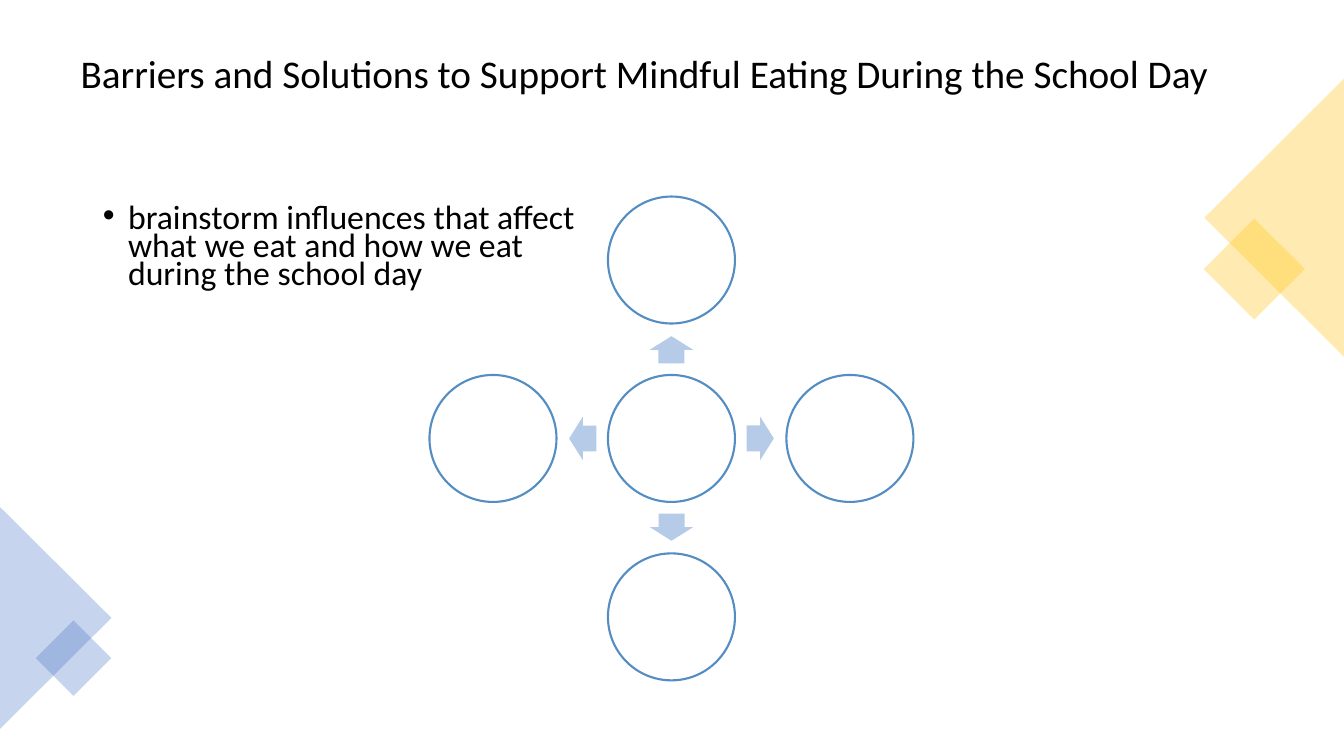
import math
from dataclasses import dataclass

from lxml import etree
from pptx import Presentation
from pptx import util as u
from pptx.dml.color import RGBColor
from pptx.enum import shapes, text
from pptx.oxml.ns import qn


@dataclass(frozen=True)
class Theme:
    font: str = "Calibri"
    ink: str = "000000"
    paper: str = "FFFFFF"
    gold: str = "FFC000"
    blue: str = "4472C4"
    outline: str = "538DC1"
    arrow: str = "B5CBE7"
    title_size: float = 28
    body_size: float = 24.1
    outline_width: float = 1.5
    decoration_alpha: int = 30


class SlideBuilder:
    def __init__(self, slide, theme):
        self.slide = slide
        self.theme = theme

    def place(self, shape, left, top, width, height):
        shape.left, shape.top = u.Inches(left), u.Inches(top)
        shape.width, shape.height = u.Inches(width), u.Inches(height)

    def fill_placeholder(self, placeholder, box, wording, size, line_spacing):
        """Move a placeholder, fill it and return its paragraph."""
        self.place(placeholder, *box)
        frame = placeholder.text_frame
        frame.text = wording
        frame.word_wrap = True
        frame.auto_size = text.MSO_AUTO_SIZE.NONE
        paragraph = frame.paragraphs[0]
        paragraph.alignment = text.PP_ALIGN.LEFT
        paragraph.line_spacing = line_spacing
        paragraph.font.name = self.theme.font
        paragraph.font.size = u.Pt(size)
        paragraph.font.color.rgb = RGBColor.from_string(self.theme.ink)
        return paragraph

    def title(self, box, wording):
        placeholder = self.slide.shapes.title
        self.fill_placeholder(placeholder, box, wording, self.theme.title_size, 0.9)
        frame = placeholder.text_frame
        frame.vertical_anchor = text.MSO_ANCHOR.MIDDLE
        frame.margin_bottom = u.Inches(0.48)  # lifts the line above the middle

    def bullet(self, box, wording):
        placeholder = self.slide.placeholders[1]
        paragraph = self.fill_placeholder(placeholder, box, wording,
                                          self.theme.body_size, 0.7)
        paragraph.space_before = u.Pt(10)
        properties = paragraph._p.get_or_add_pPr()
        properties.set("marL", str(u.Inches(0.25)))
        properties.set("indent", str(u.Inches(-0.25)))
        mark = properties.makeelement(qn("a:buChar"), {"char": "•"})
        properties.find(qn("a:defRPr")).addprevious(mark)

    def shape(self, kind, center, size, fill, rotation=0, parent=None):
        (x, y), (width, height) = center, size
        shape = (parent or self.slide).shapes.add_shape(
            kind, u.Inches(x - width / 2), u.Inches(y - height / 2),
            u.Inches(width), u.Inches(height))
        shape.rotation = rotation
        shape.shadow.inherit = False
        shape.fill.solid()
        shape.fill.fore_color.rgb = RGBColor.from_string(fill)
        shape.line.fill.background()
        return shape

    def decoration(self, kind, center, size, color, rotation):
        shape = self.shape(kind, center, size, color, rotation)
        color_element = shape._element.spPr.find(qn("a:solidFill"))[0]
        alpha = etree.SubElement(color_element, qn("a:alpha"))
        alpha.set("val", str(self.theme.decoration_alpha * 1000))

    def circle(self, center, diameter, parent):
        circle = self.shape(shapes.MSO_SHAPE.OVAL, center, (diameter, diameter),
                            self.theme.paper, parent=parent)
        circle.line.color.rgb = RGBColor.from_string(self.theme.outline)
        circle.line.width = u.Pt(self.theme.outline_width)

    def arrow(self, center, rotation, parent):
        arrow = self.shape(shapes.MSO_SHAPE.RIGHT_ARROW, center, (0.27, 0.43),
                           self.theme.arrow, rotation, parent)
        arrow.adjustments[0] = 0.6
        arrow.adjustments[1] = 0.5

    def radial_diagram(self, center, diameter, circle_distance, arrow_distance):
        group = self.slide.shapes.add_group_shape()
        self.circle(center, diameter, group)
        for angle in (270, 0, 90, 180):
            across = math.cos(math.radians(angle))
            down = math.sin(math.radians(angle))

            def outward(distance):
                return center[0] + distance * across, center[1] + distance * down

            self.arrow(outward(arrow_distance), angle, group)
            self.circle(outward(circle_distance), diameter, group)


def main():
    presentation = Presentation()
    presentation.slide_width = u.Inches(13.33)
    presentation.slide_height = u.Inches(7.5)
    theme = Theme()
    slide = presentation.slides.add_slide(presentation.slide_layouts[1])
    builder = SlideBuilder(slide, theme)

    # Title and prompt
    builder.title((0.7, 0.35, 11.93, 1.24),
                  "Barriers and Solutions to Support Mindful Eating During the School Day")
    builder.bullet((0.92, 2, 4.96, 1.06),
                   "brainstorm influences that affect what we eat "
                   "and how we eat during the school day")

    # Corner decorations
    square, triangle = shapes.MSO_SHAPE.RECTANGLE, shapes.MSO_SHAPE.ISOSCELES_TRIANGLE
    builder.decoration(square, (12.44, 2.67), (0.71, 0.71), theme.gold, 45)
    builder.decoration(triangle, (12.64, 2.16), (2.77, 1.39), theme.gold, 270)
    builder.decoration(triangle, (0.55, 6.13), (2.21, 1.11), theme.blue, 90)
    builder.decoration(square, (0.73, 6.53), (0.53, 0.53), theme.blue, 45)

    # Empty brainstorm diagram
    builder.radial_diagram((6.66, 4.35), 1.26, circle_distance=1.77, arrow_distance=0.88)

    presentation.save("out.pptx")


if __name__ == "__main__":
    main()
